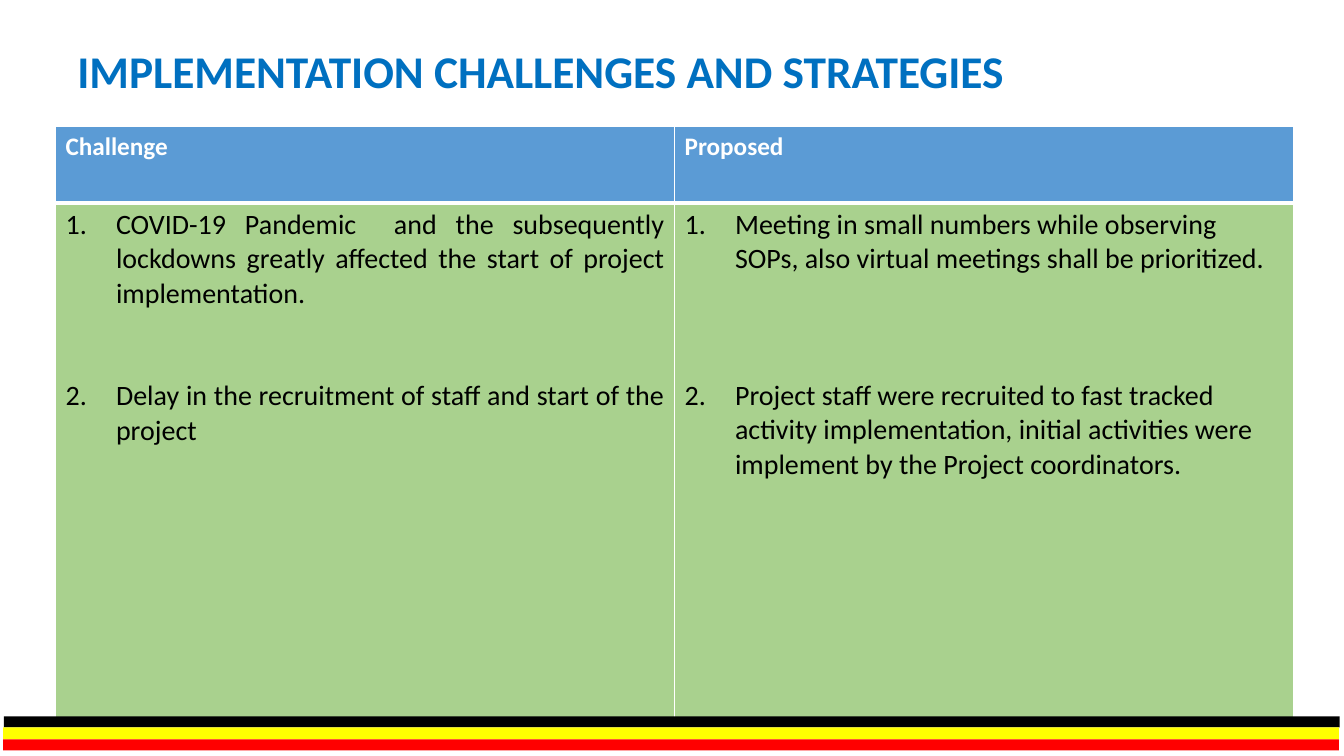
from lxml import etree
from pptx import Presentation
from pptx import util as u
from pptx.dml.color import RGBColor
from pptx.enum import shapes, text
from pptx.oxml import ns

TITLE = "IMPLEMENTATION CHALLENGES AND STRATEGIES"
COLUMNS = [
    {"head": "Challenge", "align": text.PP_ALIGN.JUSTIFY, "gap": 48.8, "items": [
        "COVID-19 Pandemic  and the subsequently lockdowns greatly affected "
        "the start of project implementation.",
        "Delay in the recruitment of staff and start of the project"]},
    {"head": "Proposed", "align": text.PP_ALIGN.LEFT, "gap": 73.2, "items": [
        "Meeting in small numbers while observing SOPs, also virtual meetings "
        "shall be prioritized.",
        "Project staff were recruited to fast tracked activity implementation, "
        "initial activities were implement by the Project coordinators."]},
]
FONT = "Calibri"
BLUE = RGBColor(0x00, 0x70, 0xC0)
HEAD_BLUE = RGBColor(0x5B, 0x9B, 0xD5)
GREEN = RGBColor(0xA9, 0xD1, 0x8E)
WHITE = RGBColor(0xFF, 0xFF, 0xFF)
BLACK = RGBColor(0x00, 0x00, 0x00)
YELLOW = RGBColor(0xFF, 0xFF, 0x00)
RED = RGBColor(0xFF, 0x00, 0x00)
STRIPES = [(0.1, 0.28, BLACK), (0.08, 0.3, YELLOW), (0.08, 0.28, RED)]
COL_WIDTH = 15.6
ROW_HEIGHTS = [1.93, 13]
INDENT = u.Cm(1.27)


def set_font(p, size, color, bold):
    p.font.name = FONT
    p.font.size = u.Pt(size)
    p.font.color.rgb = color
    p.font.bold = bold


def set_borders(cell, widths):
    tc_pr = cell._tc.get_or_add_tcPr()
    for i, (side, width) in enumerate(zip("LRTB", widths)):
        ln = etree.Element(ns.qn("a:ln" + side), w=str(u.Pt(width)))
        fill = etree.SubElement(ln, ns.qn("a:solidFill"))
        etree.SubElement(fill, ns.qn("a:srgbClr"), val=str(WHITE))
        tc_pr.insert(i, ln)


def number(p):
    p_pr = p._p.get_or_add_pPr()
    p_pr.set("marL", str(INDENT))
    p_pr.set("indent", str(-INDENT))
    bullet_font = etree.Element(ns.qn("a:buFont"), typeface="+mj-lt")
    bullet = etree.Element(ns.qn("a:buAutoNum"), type="arabicPeriod")
    p_pr.insert_element_before(bullet_font, "a:tabLst", "a:defRPr", "a:extLst")
    p_pr.insert_element_before(bullet, "a:tabLst", "a:defRPr", "a:extLst")


def add_title(s):
    tf = s.shapes.add_textbox(u.Cm(1.7), u.Cm(1.36), u.Cm(29.85), u.Cm(1)).text_frame
    tf.word_wrap = True
    tf.vertical_anchor = text.MSO_ANCHOR.MIDDLE
    p = tf.paragraphs[0]
    p.text = TITLE
    p.line_spacing = 0.9
    set_font(p, 32.4, BLUE, True)


def add_challenges(s):
    table = s.shapes.add_table(
        len(ROW_HEIGHTS), len(COLUMNS), u.Cm(1.4), u.Cm(3.18),
        u.Cm(COL_WIDTH * len(COLUMNS)), u.Cm(sum(ROW_HEIGHTS))).table
    for row, height in zip(table.rows, ROW_HEIGHTS):
        row.height = u.Cm(height)
    for c, column in enumerate(COLUMNS):
        table.columns[c].width = u.Cm(COL_WIDTH)
        head, body = table.cell(0, c), table.cell(1, c)
        for cell, color, widths in ((head, HEAD_BLUE, (1, 1, 1, 3)),
                                    (body, GREEN, (1, 1, 3, 1))):
            cell.fill.solid()
            cell.fill.fore_color.rgb = color
            set_borders(cell, widths)
        head.text = column["head"]
        set_font(head.text_frame.paragraphs[0], 18, WHITE, True)
        body.text = "\n".join(column["items"])
        for i, p in enumerate(body.text_frame.paragraphs):
            p.alignment = column["align"]
            if i:
                p.space_before = u.Pt(column["gap"])
            number(p)
            set_font(p, 20, BLACK, False)


def add_stripes(s):
    top = 18.05
    for left, height, color in STRIPES:
        sp = s.shapes.add_shape(shapes.MSO_SHAPE.RECTANGLE, u.Cm(left), u.Cm(top),
                                u.Cm(33.66), u.Cm(height))
        sp.shadow.inherit = False
        sp.fill.solid()
        sp.fill.fore_color.rgb = color
        sp.line.fill.background()
        top += height


def main():
    prs = Presentation()
    prs.slide_width, prs.slide_height = u.Cm(33.87), u.Cm(19.05)
    s = prs.slides.add_slide(prs.slide_layouts[6])
    add_title(s)
    add_challenges(s)
    add_stripes(s)
    prs.save("out.pptx")


if __name__ == "__main__":
    main()
